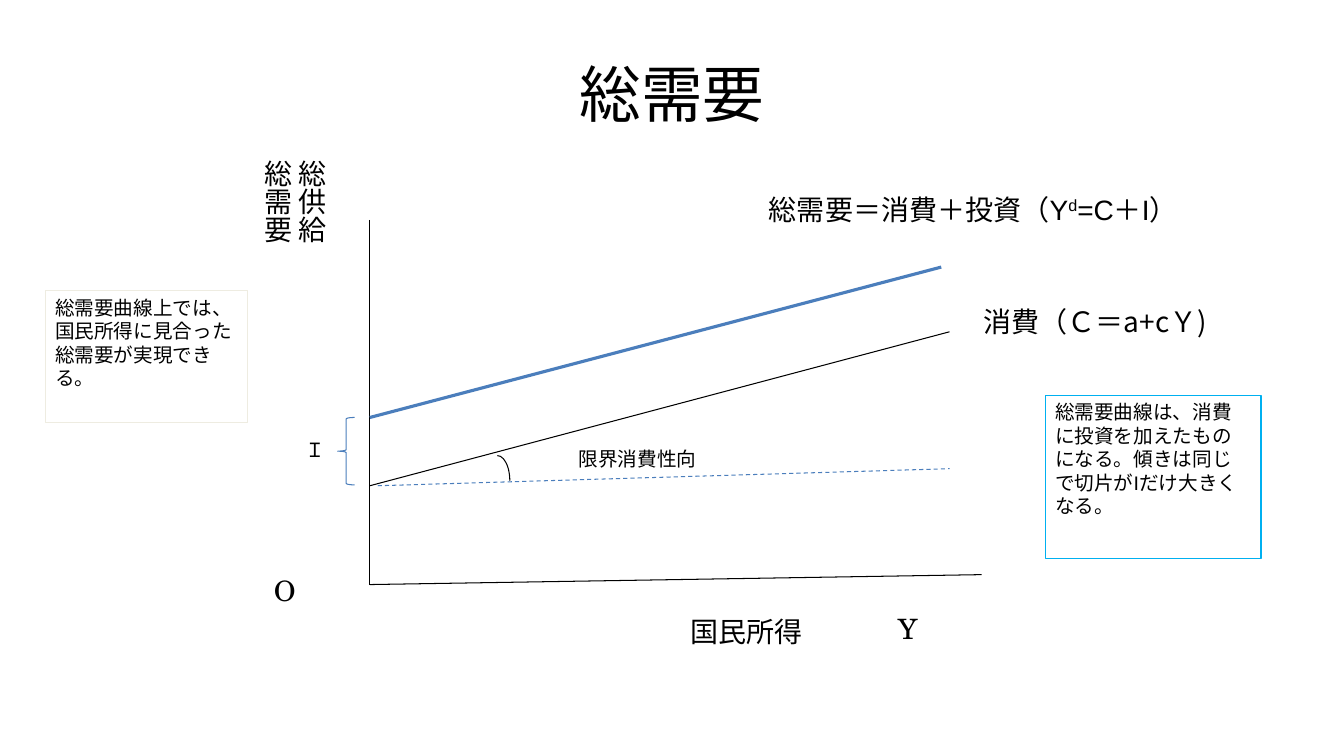
from lxml.etree import SubElement
from pptx import Presentation
from pptx.dml.color import RGBColor
from pptx.enum.dml import MSO_LINE
from pptx.enum.lang import MSO_LANGUAGE_ID
from pptx.enum.shapes import MSO_CONNECTOR, MSO_SHAPE
from pptx.enum.text import MSO_ANCHOR, PP_ALIGN
from pptx.oxml.ns import qn
from pptx.util import Cm, Pt

BLACK, BLUE = "000000", "4B7EBC"
CJK, SERIF = "Noto Sans CJK JP", "TeX Gyre Schola"


def color(value):
    return RGBColor.from_string(value)


def write(shape, lines, size, font):
    frame = shape.text_frame
    frame.word_wrap = True
    frame.vertical_anchor = MSO_ANCHOR.TOP
    for index, line in enumerate(lines):
        paragraph = frame.paragraphs[0] if index == 0 else frame.add_paragraph()
        paragraph.alignment = PP_ALIGN.LEFT
        # Keep closing punctuation inside the text area
        paragraph._p.get_or_add_pPr().set("hangingPunct", "0")
        for part in line.split("|"):
            run = paragraph.add_run()
            run.text = part
            run.font.size = Pt(size)
            run.font.name = font
            run.font.language_id = MSO_LANGUAGE_ID.JAPANESE
            run.font.color.rgb = color(BLACK)
            # East Asian font sets the line height of the Japanese text
            SubElement(run.font._element, qn("a:ea"), typeface="Calibri")
    return frame


presentation = Presentation()
presentation.slide_width = Cm(33.87)
presentation.slide_height = Cm(19.05)
slide = presentation.slides.add_slide(presentation.slide_layouts[6])

# Axes, consumption, its horizontal reference and total demand
origin_x = 9.32
lines = [
    (origin_x, 5.54, origin_x, 14.73, BLACK, 0.75, None),
    (origin_x, 14.73, 24.74, 14.48, BLACK, 0.75, None),
    (origin_x, 12.24, 23.93, 8.36, BLACK, 0.75, None),
    (9.52, 12.24, 23.93, 11.81, BLUE, 0.75, MSO_LINE.DASH),
    (origin_x, 10.52, 23.72, 6.73, BLUE, 2.25, None),
]
for x1, y1, x2, y2, line_color, width, dash in lines:
    connector = slide.shapes.add_connector(
        MSO_CONNECTOR.STRAIGHT, Cm(x1), Cm(y1), Cm(x2), Cm(y2))
    connector.line.color.rgb = color(line_color)
    connector.line.width = Pt(width)
    if dash:
        connector.line.dash_style = dash
    SubElement(connector._element.spPr, qn("a:effectLst"))

# Slope angle, investment brace and framed notes
outlines = [
    (MSO_SHAPE.ARC, 12.22, 11.48, 0.63, 1.27, BLACK, None),
    (MSO_SHAPE.LEFT_BRACE, 8.51, 10.52, 0.43, 1.7, BLUE, None),
    (MSO_SHAPE.RECTANGLE, 1.14, 7.32, 5.11, 3.33, "EEECE1",
     "総需要曲線上では、国民所得に見合った総需要が実現できる。"),
    (MSO_SHAPE.RECTANGLE, 26.34, 9.96, 5.44, 4.11, "00B0F0",
     "総需要曲線は、消費に投資を加えたものになる。傾きは同じで切片がIだけ大きくなる。"),
]
for kind, left, top, width, height, line_color, note in outlines:
    shape = slide.shapes.add_shape(kind, Cm(left), Cm(top), Cm(width), Cm(height))
    shape.shadow.inherit = False
    shape.fill.background()
    shape.line.color.rgb = color(line_color)
    shape.line.width = Pt(0.75)
    if note:
        write(shape, [note], 14, "Arial")

# Title and labels
labels = {
    "title": (1.7, 0.76, 30.48, 3.18, ["総需要"], 44, "Calibri"),
    "vertical axis": (6.6, 3.94, 1.9, 2.59, ["総供給", "総需要"], 20, CJK),
    "consumption": (24.54, 7.54, 8, 1.57, ["消費（Ｃ＝a+cＹ)"], 20, CJK),
    "income": (17.14, 15.37, 4.39, 0.97, ["国民所得"], 20, CJK),
    "Y": (22.38, 15.29, 1.7, 1.27, ["Y"], 20, SERIF),
    "origin": (6.45, 13.46, 1.27, 2.06, ["O"], 20, SERIF),
    "slope": (14.33, 11.13, 5.99, 1.02, ["限界消費性向"], 14, "Arial"),
    "demand": (19.13, 4.72, 11.81, 1.12,
               ["総需要＝消費＋投資（Y|d|=C＋I）"], 20, "Arial"),
    "investment": (7.44, 10.9, 0.79, 1.02, ["Ｉ"], 14, "Arial"),
}
frames = {}
for name, (left, top, width, height, text, size, font) in labels.items():
    box = slide.shapes.add_textbox(Cm(left), Cm(top), Cm(width), Cm(height))
    frames[name] = write(box, text, size, font)

# Label details
frames["title"].vertical_anchor = MSO_ANCHOR.MIDDLE
frames["title"].paragraphs[0].alignment = PP_ALIGN.CENTER
axis_frame = frames["vertical axis"]
axis_frame._txBody.bodyPr.set("vert", "eaVert")
axis_frame.margin_top = Cm(0.1)
axis_frame.margin_bottom = Cm(0)
axis_frame.margin_left = Cm(0)
axis_frame.margin_right = Cm(0.23)
frames["origin"].vertical_anchor = MSO_ANCHOR.BOTTOM
frames["origin"].margin_left = Cm(0.45)
frames["origin"].margin_bottom = Cm(0.21)
superscript = frames["demand"].paragraphs[0].runs[1]
superscript.font._element.set("baseline", "30000")

presentation.save("out.pptx")
